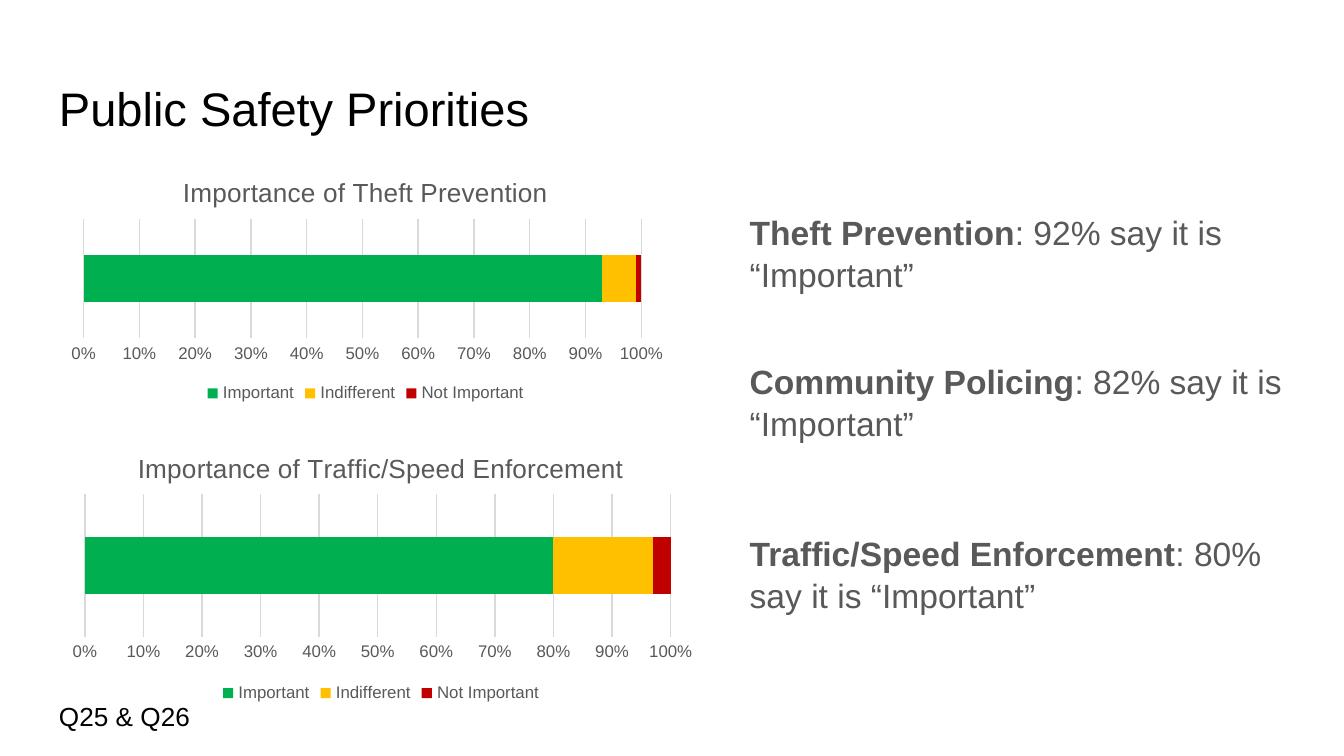
from pptx import Presentation
from pptx.chart.data import CategoryChartData
from pptx.dml.color import RGBColor
from pptx.enum.chart import (XL_CHART_TYPE, XL_LEGEND_POSITION, XL_TICK_LABEL_POSITION,
                             XL_TICK_MARK)
from pptx.enum.text import MSO_ANCHOR
from pptx.oxml import parse_xml
from pptx.oxml.ns import nsdecls
from pptx.util import Inches, Pt

FONT = "Arial"
BLACK, GREY, GRID = "000000", "595959", "D9D9D9"

TITLE = "Public Safety Priorities"
QUESTIONS = "Q25 & Q26"
# topic, finding, space before in points
FINDINGS = [
    ("Theft Prevention", ": 92% say it is “Important”", 0),
    ("Community Policing", ": 82% say it is “Important”", 34.5),
    ("Traffic/Speed Enforcement", ": 80% say it is “Important”", 47),
]
ANSWERS = [("Important", "00B050"), ("Indifferent", "FFC000"), ("Not Important", "C00000")]
# title, shares per answer, chart box in inches, plot area as shares of the box
SURVEYS = [
    ("Importance of Traffic/Speed Enforcement", (80, 17, 3),
     (0.44, 3.23, 4.79, 2.04), (0.04, 0.22, 0.91, 0.52)),
    ("Importance of Theft Prevention", (92, 6, 1),
     (0.44, 1.18, 4.56, 1.86), (0.04, 0.24, 0.91, 0.48)),
]


def color(hex_code):
    return RGBColor.from_string(hex_code)


def style(font, size, hex_code):
    font.name, font.size, font.bold = FONT, Pt(size), False
    font.color.rgb = color(hex_code)


def add_text(slide, box, anchor, margin=0.1):
    frame = slide.shapes.add_textbox(*map(Inches, box)).text_frame
    frame.word_wrap = True
    frame.vertical_anchor = anchor
    frame.margin_left = frame.margin_right = Inches(0.1)
    frame.margin_top = frame.margin_bottom = Inches(margin)
    return frame


def add_line(slide, text, size, box, margin):
    paragraph = add_text(slide, box, MSO_ANCHOR.TOP, margin).paragraphs[0]
    paragraph.text = text
    style(paragraph.font, size, BLACK)


def place_plot(chart, shares):
    """Fix the inner plot area inside the chart box."""
    plot_area = chart.plots[0]._element.getparent()
    for old in plot_area.findall("{*}layout"):
        plot_area.remove(old)
    modes = '<c:layoutTarget val="inner"/><c:xMode val="edge"/><c:yMode val="edge"/>'
    sizes = "".join(f'<c:{key} val="{share}"/>' for key, share in zip("xywh", shares))
    plot_area.insert(0, parse_xml(
        f'<c:layout {nsdecls("c")}><c:manualLayout>{modes}{sizes}</c:manualLayout></c:layout>'))


def add_survey(slide, title, shares, box, plot_shares):
    data = CategoryChartData()
    data.categories = ["1"]
    for (answer, _), share in zip(ANSWERS, shares):
        data.add_series(answer, [share])
    chart = slide.shapes.add_chart(
        XL_CHART_TYPE.BAR_STACKED_100, *map(Inches, box), data).chart
    style(chart.font, 10, BLACK)

    chart.has_title = True
    heading = chart.chart_title.text_frame.paragraphs[0]
    heading.text = title
    style(heading.font, 14, GREY)
    chart.chart_title.include_in_layout = False

    chart.has_legend = True
    chart.legend.position = XL_LEGEND_POSITION.BOTTOM
    chart.legend.include_in_layout = False
    style(chart.legend.font, 9, GREY)

    plot = chart.plots[0]
    plot.gap_width, plot.overlap, plot.vary_by_categories = 150, 100, False
    for series, (_, fill) in zip(plot.series, ANSWERS):
        series.format.fill.solid()
        series.format.fill.fore_color.rgb = color(fill)

    chart.category_axis.visible = False
    axis = chart.value_axis
    axis.minimum_scale, axis.maximum_scale, axis.major_unit = 0, 1, 0.1
    axis.major_tick_mark = axis.minor_tick_mark = XL_TICK_MARK.NONE
    axis.tick_label_position = XL_TICK_LABEL_POSITION.NEXT_TO_AXIS
    axis.tick_labels.number_format = "0%"
    axis.tick_labels.number_format_is_linked = False
    style(axis.tick_labels.font, 9, GREY)
    axis.format.line.fill.background()
    axis.has_major_gridlines = True
    axis.major_gridlines.format.line.color.rgb = color(GRID)
    axis.major_gridlines.format.line.width = Pt(0.75)
    place_plot(chart, plot_shares)


def add_findings(slide):
    frame = add_text(slide, (5.48, 1.46, 4.18, 3.54), MSO_ANCHOR.TOP)
    for index, (topic, finding, space) in enumerate(FINDINGS):
        paragraph = frame.add_paragraph() if index else frame.paragraphs[0]
        paragraph.line_spacing = 1.05
        paragraph.space_before = Pt(space)
        style(paragraph.font, 18, GREY)
        topic_run = paragraph.add_run()
        topic_run.text = topic
        topic_run.font.bold = True
        paragraph.add_run().text = finding


def main():
    deck = Presentation()
    deck.slide_width = Inches(10)
    deck.slide_height = deck.slide_width * 9 // 16
    slide = deck.slides.add_slide(deck.slide_layouts[6])
    add_line(slide, TITLE, 25.2, (0.34, 0.49, 9.32, 0.63), 0.1)
    add_findings(slide)
    for survey in SURVEYS:
        add_survey(slide, *survey)
    add_line(slide, QUESTIONS, 14, (0.34, 5.16, 1.98, 0.34), 0.05)
    deck.save("out.pptx")


if __name__ == "__main__":
    main()
